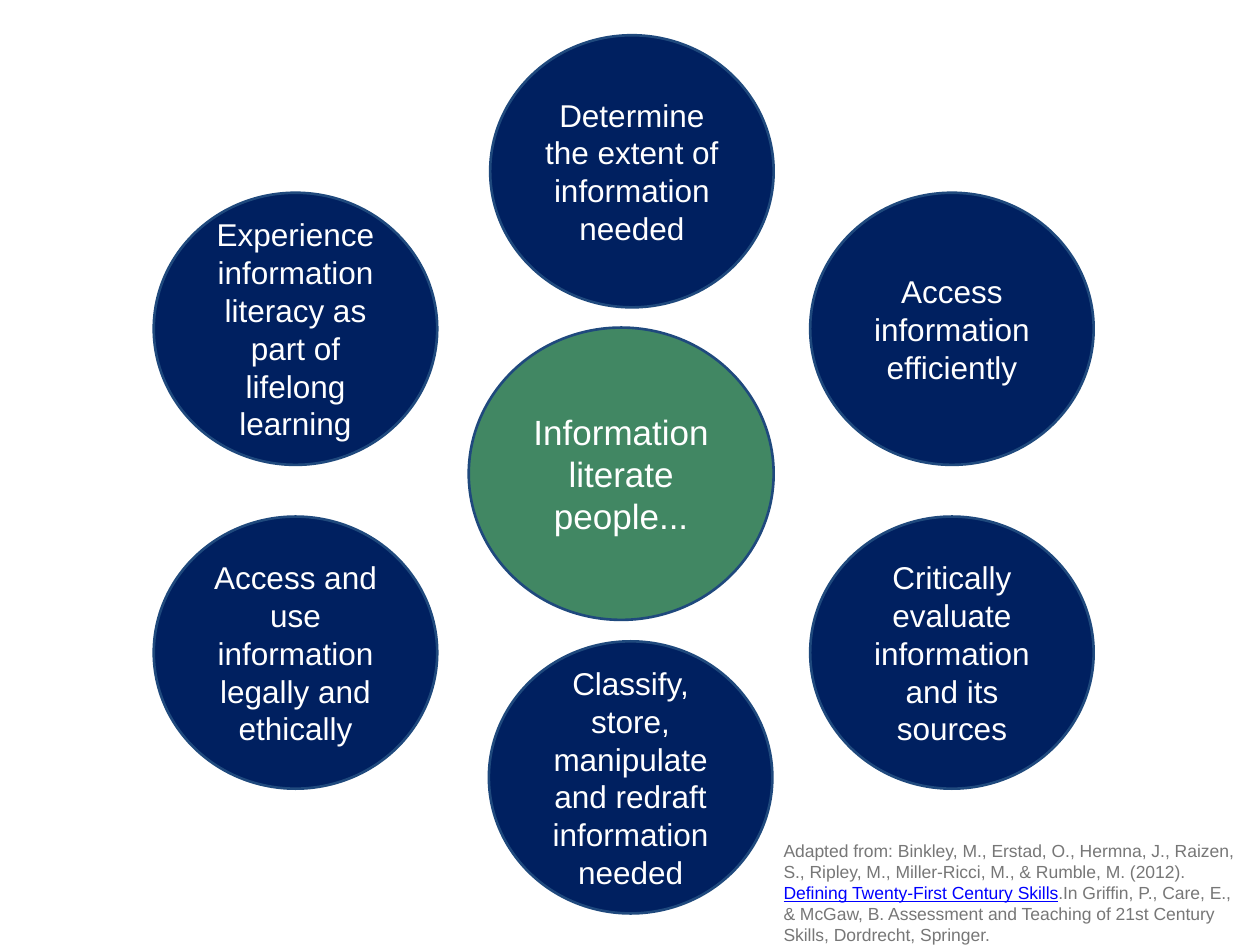
from collections import namedtuple

from pptx import Presentation
from pptx.dml.color import RGBColor
from pptx.enum import shapes, text
from pptx.util import Inches, Pt

COLS, ROWS = 100, 75
WIDE, HIGH = Inches(10), Inches(7.5)
FONT = "Arial"
HUES = {"navy": "002060", "green": "418763", "edge": "1F497D",
        "white": "FFFFFF", "grey": "777777", "link": "0000FF"}

# Every box is measured in columns and rows of the slide grid.
Box = namedtuple("Box", "x y w h")
HUB = Box(37.2, 26, 24.2, 23.2)
RING = Box(12.2, 2.8, 74.6, 69.7)
CITE = Box(61.2, 64.2, 38.5, 13.3)
DISC_W, DISC_H = 22.5, 21.6

# Offsets inside the ring
LEFT, MID, RIGHT = 0, 26.7, RING.w - DISC_W
UPPER, LOWER = 12.5, 38.2
STEPS = [
    (MID, 0, "Determine the extent of information needed"),
    (RIGHT, UPPER, "Access information efficiently"),
    (RIGHT, LOWER, "Critically evaluate information and its sources"),
    (MID - 0.1, RING.h - DISC_H,
     "Classify, store, manipulate and redraft information needed"),
    (LEFT, LOWER, "Access and use information legally and ethically"),
    (LEFT, UPPER,
     "Experience information literacy as part of lifelong learning"),
]


def rgb(name):
    return RGBColor.from_string(HUES[name])


def place(box):
    """Turn a grid box into slide lengths."""
    return (int(WIDE * box.x / COLS), int(HIGH * box.y / ROWS),
            int(WIDE * box.w / COLS), int(HIGH * box.h / ROWS))


def setup(frame):
    frame.word_wrap = True
    frame.vertical_anchor = text.MSO_ANCHOR.MIDDLE
    frame.margin_left = frame.margin_right = Inches(0.1)
    frame.margin_top = frame.margin_bottom = Inches(0.1)


def write(para, words, size, hue, line=False):
    run = para.add_run()
    run.text = words
    run.font.name = FONT
    run.font.size = Pt(size)
    run.font.color.rgb = rgb(hue)
    run.font.underline = line


def disc(slide, box, words, size, hue):
    shape = slide.shapes.add_shape(shapes.MSO_SHAPE.OVAL, *place(box))
    shape.shadow.inherit = False
    shape.fill.solid()
    shape.fill.fore_color.rgb = rgb(hue)
    shape.line.color.rgb = rgb("edge")
    shape.line.width = Pt(1.5)
    setup(shape.text_frame)
    para = shape.text_frame.paragraphs[0]
    para.alignment = text.PP_ALIGN.CENTER
    write(para, words, size, "white")


def ring(slide, box):
    for x, y, words in STEPS:
        spot = Box(box.x + x, box.y + y, DISC_W, DISC_H)
        disc(slide, spot, words, 18, "navy")


def cite(slide, box):
    frame = slide.shapes.add_textbox(*place(box)).text_frame
    setup(frame)
    write(frame.paragraphs[0],
          "Adapted from: Binkley, M., Erstad, O., Hermna, J., Raizen, S., "
          "Ripley, M., Miller-Ricci, M., & Rumble, M. (2012).", 10, "grey")
    book = frame.add_paragraph()
    write(book, "Defining Twenty-First Century Skills", 10, "link", True)
    write(book, ".In Griffin, P., Care, E., & McGaw, B. Assessment and "
          "Teaching of 21st Century Skills, Dordrecht, Springer.", 10, "grey")


def main():
    deck = Presentation()
    deck.slide_width, deck.slide_height = WIDE, HIGH
    slide = deck.slides.add_slide(deck.slide_layouts[6])
    disc(slide, HUB, "Information literate people...", 20, "green")
    ring(slide, RING)
    cite(slide, CITE)
    deck.save("out.pptx")


if __name__ == "__main__":
    main()
